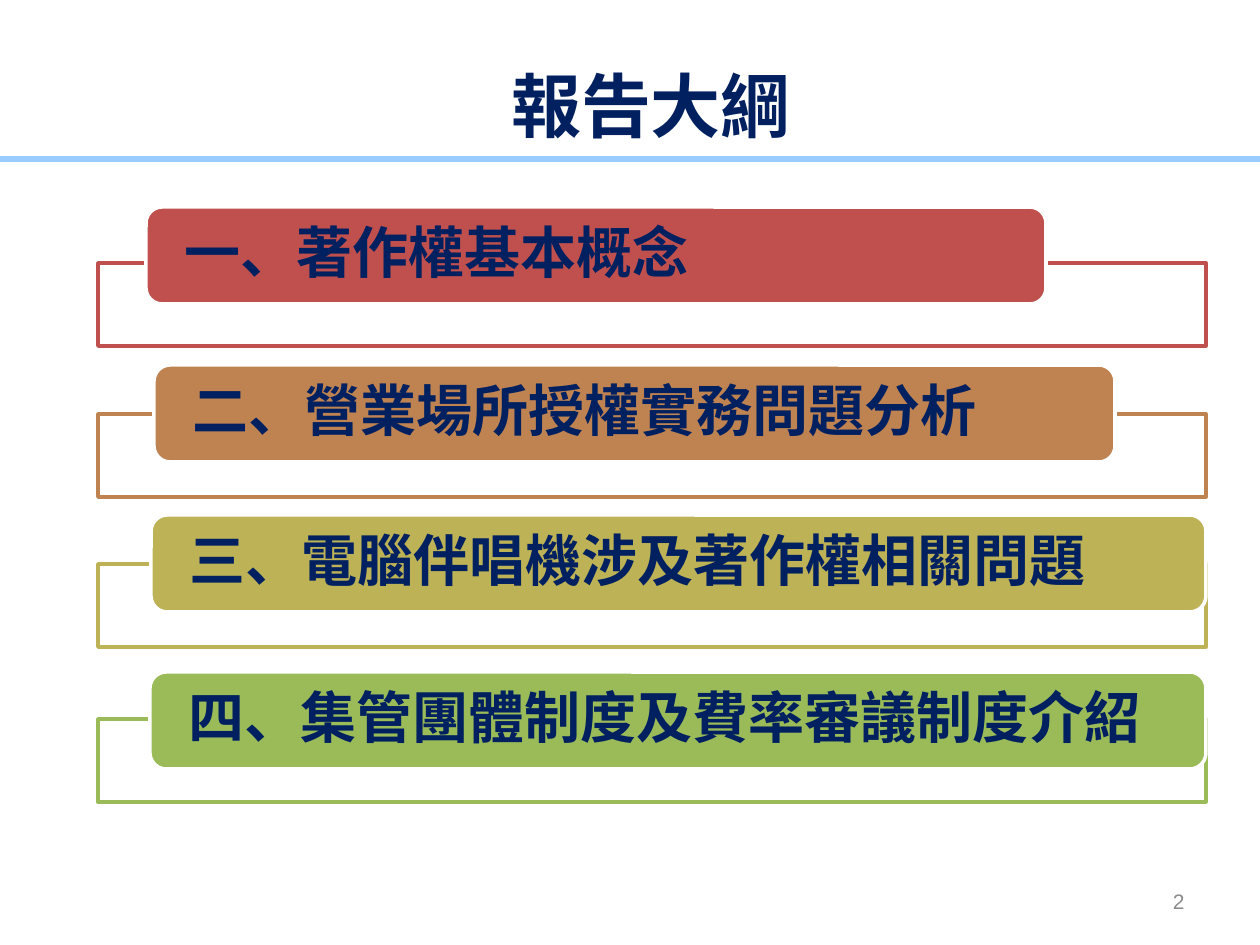
from pptx import Presentation
from pptx.dml.color import RGBColor
from pptx.enum.shapes import MSO_SHAPE as Shape
from pptx.enum.text import MSO_ANCHOR as Anchor, PP_ALIGN as Align
from pptx.oxml.ns import qn
from pptx.util import Emu, Pt

# Content: text, colour, frame top, label left, label top, label width (px)
TITLE = "報告大綱"
PAGE_NUMBER = "2"
TOPICS = [
    ("一、著作權基本概念", "C0504D", 263, 146, 207, 900),
    ("二、營業場所授權實務問題分析", "BE8351", 414, 154, 365, 961),
    ("三、電腦伴唱機涉及著作權相關問題", "BDB255", 564, 151, 515, 1055),
    ("四、集管團體制度及費率審議制度介紹", "9BBB59", 719, 150, 672, 1056),
]
FRAME_LEFT, FRAME_WIDTH, FRAME_HEIGHT = 98, 1108, 83
LABEL_HEIGHT, LABEL_INSET, HANGING_INDENT = 97, 34, 98
NAVY, WHITE = "002060", "FFFFFF"
CJK_FONT = "Noto Sans CJK SC"


def px(length):
    return Emu(round(length * 914400 / 126))


def color(value):
    return RGBColor.from_string(value)


def set_font(paragraph, name, size, value, bold=False):
    font = paragraph.font
    font.name, font.size, font.bold = name, Pt(size), bold
    font.color.rgb = color(value)
    properties = paragraph._p.pPr.find(qn("a:defRPr"))
    east_asian = properties.makeelement(qn("a:ea"), {"typeface": name})
    properties.find(qn("a:latin")).addnext(east_asian)


def add_box(kind, left, top, width, height, fill, line=None):
    shape = slide.shapes.add_shape(kind, px(left), px(top), px(width), px(height))
    shape.shadow.inherit = False
    shape.fill.solid()
    shape.fill.fore_color.rgb = color(fill)
    if line:
        shape.line.color.rgb = color(line)
        shape.line.width = Pt(2)
    else:
        shape.line.fill.background()
    return shape


presentation = Presentation()
presentation.slide_width, presentation.slide_height = px(1260), px(945)
slide = presentation.slides.add_slide(presentation.slide_layouts[5])

# Rule under the title
add_box(Shape.RECTANGLE, -5, 156, 1268, 6, "99CCFF")

# Title
title = slide.shapes.title
title.left, title.top, title.width, title.height = px(84), px(26), px(1134), px(158)
title.text_frame.text = TITLE
title.text_frame.vertical_anchor = Anchor.MIDDLE
paragraph = title.text_frame.paragraphs[0]
paragraph.alignment = Align.CENTER
set_font(paragraph, CJK_FONT, 40, NAVY, bold=True)

# Page number
number = slide.shapes.add_textbox(px(903), px(876), px(294), px(50))
number.text_frame.word_wrap = True
number.text_frame.vertical_anchor = Anchor.MIDDLE
paragraph = number.text_frame.paragraphs[0]
paragraph.text = PAGE_NUMBER
paragraph.alignment = Align.RIGHT
set_font(paragraph, "Arial", 12, "8C8C8C")

# Topics: an outlined frame with a rounded label over its top edge
for text, accent, frame_top, left, top, width in TOPICS:
    add_box(Shape.RECTANGLE, FRAME_LEFT, frame_top, FRAME_WIDTH, FRAME_HEIGHT, WHITE, accent)
    label = add_box(Shape.ROUNDED_RECTANGLE, left, top, width, LABEL_HEIGHT, accent, WHITE)
    frame = label.text_frame
    frame.word_wrap = True
    frame.vertical_anchor = Anchor.MIDDLE
    frame.margin_left = frame.margin_right = px(LABEL_INSET)
    frame.margin_top = frame.margin_bottom = 0
    paragraph = frame.paragraphs[0]
    paragraph.text = text
    paragraph.alignment = Align.LEFT
    paragraph.line_spacing = 0.9
    set_font(paragraph, CJK_FONT, 32, NAVY, bold=True)
    indents = paragraph._p.get_or_add_pPr()
    indents.set("marL", str(px(HANGING_INDENT)))
    indents.set("indent", str(-px(HANGING_INDENT)))

presentation.save("out.pptx")
